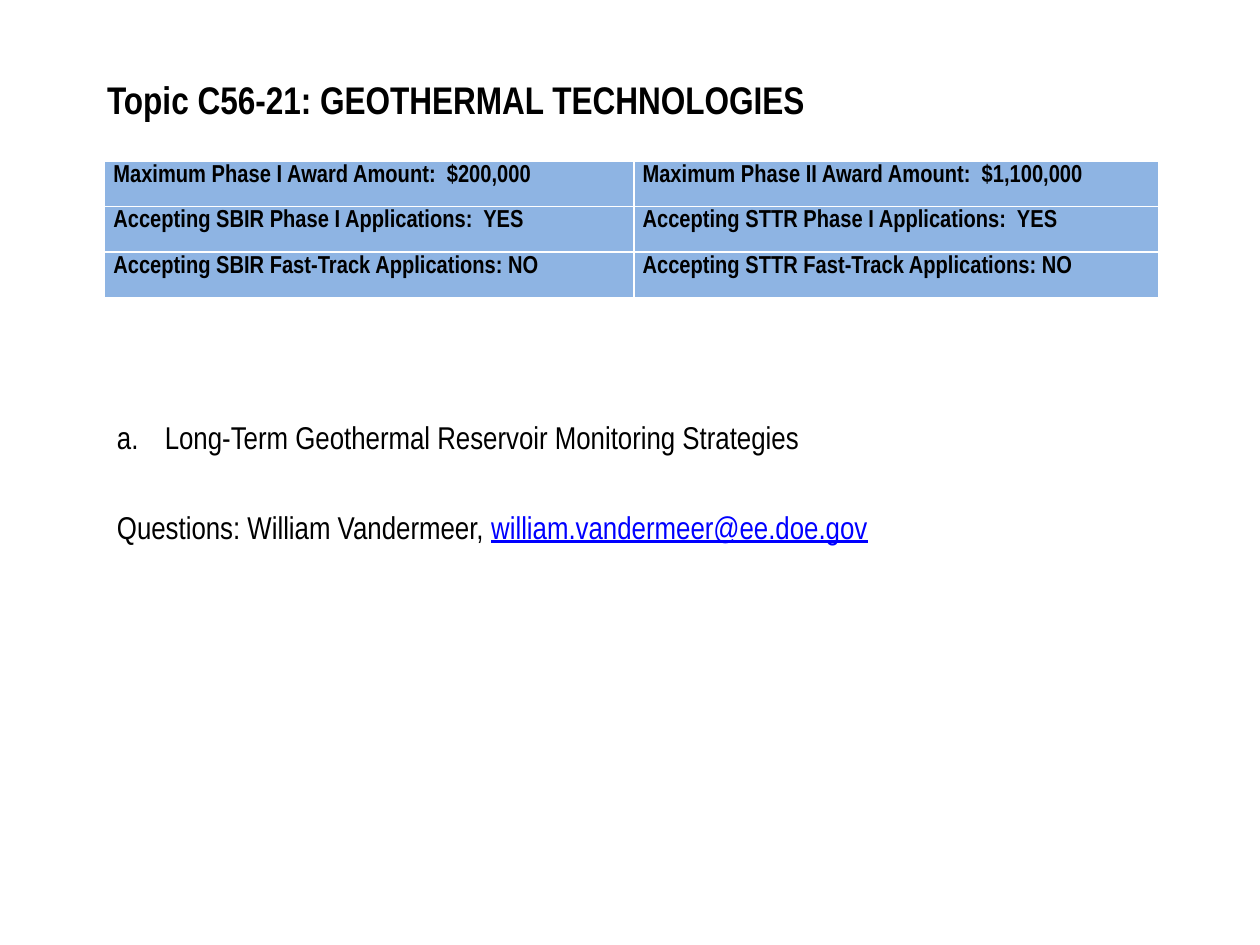
import pptx
import pptx.dml.color
import pptx.enum.text
import pptx.util
from lxml import etree
from pptx.oxml.ns import qn

Inches = pptx.util.Inches
Pt = pptx.util.Pt
RGBColor = pptx.dml.color.RGBColor

FONT = "Arial Narrow"
BLACK = RGBColor(0x00, 0x00, 0x00)
LINK_BLUE = RGBColor(0x00, 0x00, 0xFF)
CELL_BLUE = RGBColor(0x8E, 0xB4, 0xE3)

TITLE = "Topic C56-21: GEOTHERMAL TECHNOLOGIES"
AWARD_ROWS = [
    ("Maximum Phase I Award Amount:  $200,000", "Maximum Phase II Award Amount:  $1,100,000"),
    ("Accepting SBIR Phase I Applications:  YES", "Accepting STTR Phase I Applications:  YES"),
    ("Accepting SBIR Fast-Track Applications: NO", "Accepting STTR Fast-Track Applications: NO"),
]
COLUMN_WIDTHS = (4.2, 4.17)
ROW_HEIGHT = 0.36
SUBTOPIC = "Long-Term Geothermal Reservoir Monitoring Strategies"
CONTACT = "Questions: William Vandermeer, "
EMAIL = "william.vandermeer@ee.doe.gov"


def style_paragraph(paragraph, size, bold=False):
    paragraph.alignment = pptx.enum.text.PP_ALIGN.LEFT
    font = paragraph.font
    font.name = FONT
    font.size = Pt(size)
    font.bold = bold
    font.color.rgb = BLACK


def add_title(slide):
    title = slide.shapes.title
    title.left, title.top = Inches(0.75), Inches(0.33)
    title.width, title.height = Inches(8.92), Inches(0.92)
    title.text_frame.text = TITLE
    title.text_frame.vertical_anchor = pptx.enum.text.MSO_ANCHOR.MIDDLE
    style_paragraph(title.text_frame.paragraphs[0], 22, bold=True)


def add_award_table(slide):
    table = slide.shapes.add_table(
        len(AWARD_ROWS), len(COLUMN_WIDTHS), Inches(0.83), Inches(1.28),
        Inches(sum(COLUMN_WIDTHS)), Inches(ROW_HEIGHT * len(AWARD_ROWS)),
    ).table
    table.horz_banding = False
    for column, width in zip(table.columns, COLUMN_WIDTHS):
        column.width = Inches(width)
    for row, texts in zip(table.rows, AWARD_ROWS):
        row.height = Inches(ROW_HEIGHT)
        for cell, text in zip(row.cells, texts):
            cell.fill.solid()
            cell.fill.fore_color.rgb = CELL_BLUE
            cell.margin_left = cell.margin_right = Inches(0.07)
            cell.margin_top = cell.margin_bottom = 0
            cell.text = text
            paragraph = cell.text_frame.paragraphs[0]
            paragraph.line_spacing = 1.15
            style_paragraph(paragraph, 14, bold=True)


def add_subtopics(slide):
    box = slide.shapes.add_textbox(Inches(0.83), Inches(3.27), Inches(8.67), Inches(1.58))
    frame = box.text_frame
    frame.word_wrap = True

    subtopic = frame.paragraphs[0]
    subtopic.text = SUBTOPIC
    properties = subtopic._p.get_or_add_pPr()
    properties.set("marL", str(Inches(0.38)))
    properties.set("indent", str(-Inches(0.38)))
    etree.SubElement(properties, qn("a:buFont"), typeface="+mj-lt")
    etree.SubElement(properties, qn("a:buAutoNum"), type="alphaLcPeriod")
    style_paragraph(subtopic, 18)

    questions = frame.add_paragraph()
    questions.space_before = Pt(29.5)
    questions.add_run().text = CONTACT
    email = questions.add_run()
    email.text = EMAIL
    email.font.color.rgb = LINK_BLUE
    email.font.underline = True
    style_paragraph(questions, 18)


def main():
    presentation = pptx.Presentation()
    presentation.slide_width = Inches(10)
    presentation.slide_height = Inches(7.5)
    slide = presentation.slides.add_slide(presentation.slide_layouts[5])
    add_title(slide)
    add_subtopics(slide)
    add_award_table(slide)
    presentation.save("out.pptx")


if __name__ == "__main__":
    main()
